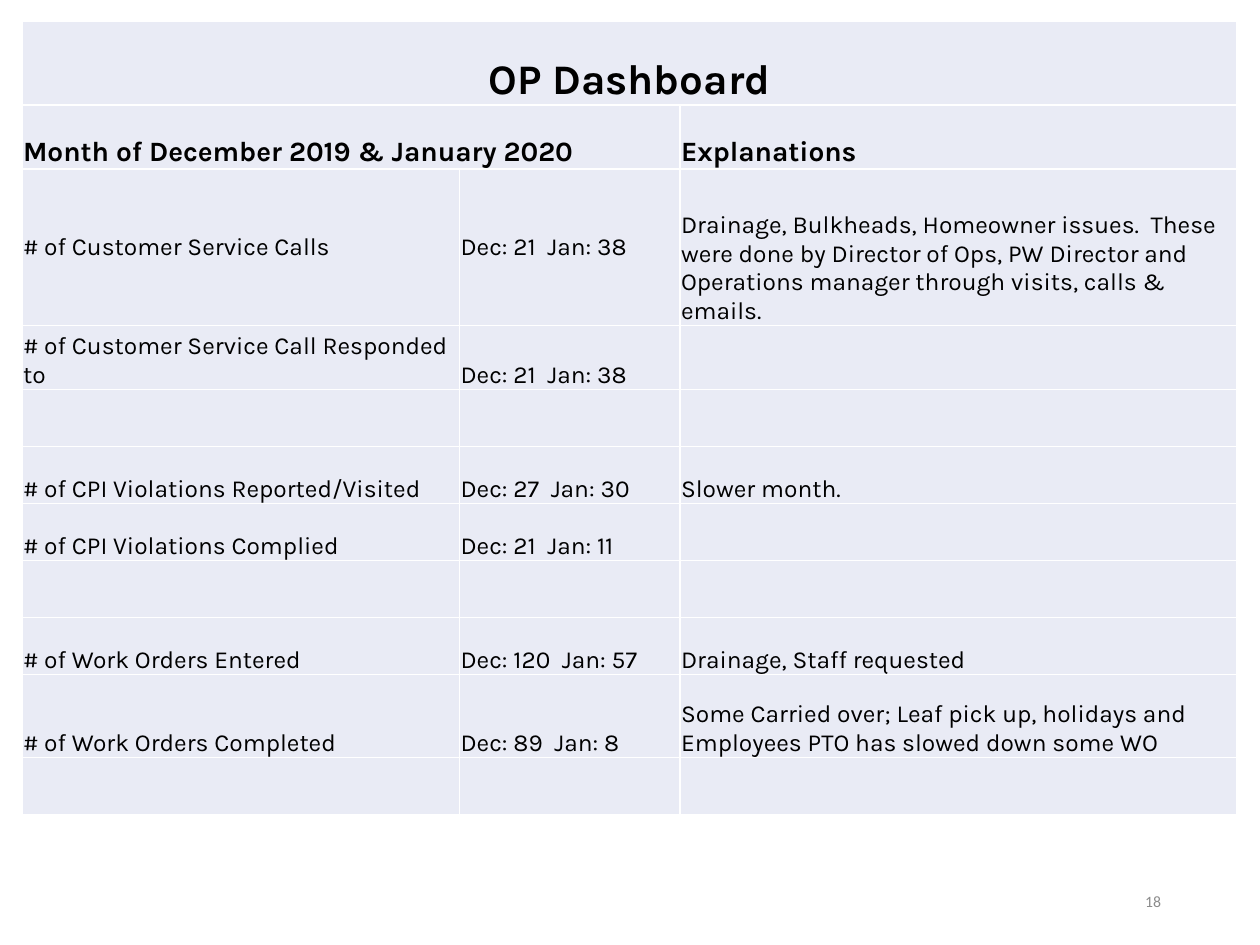
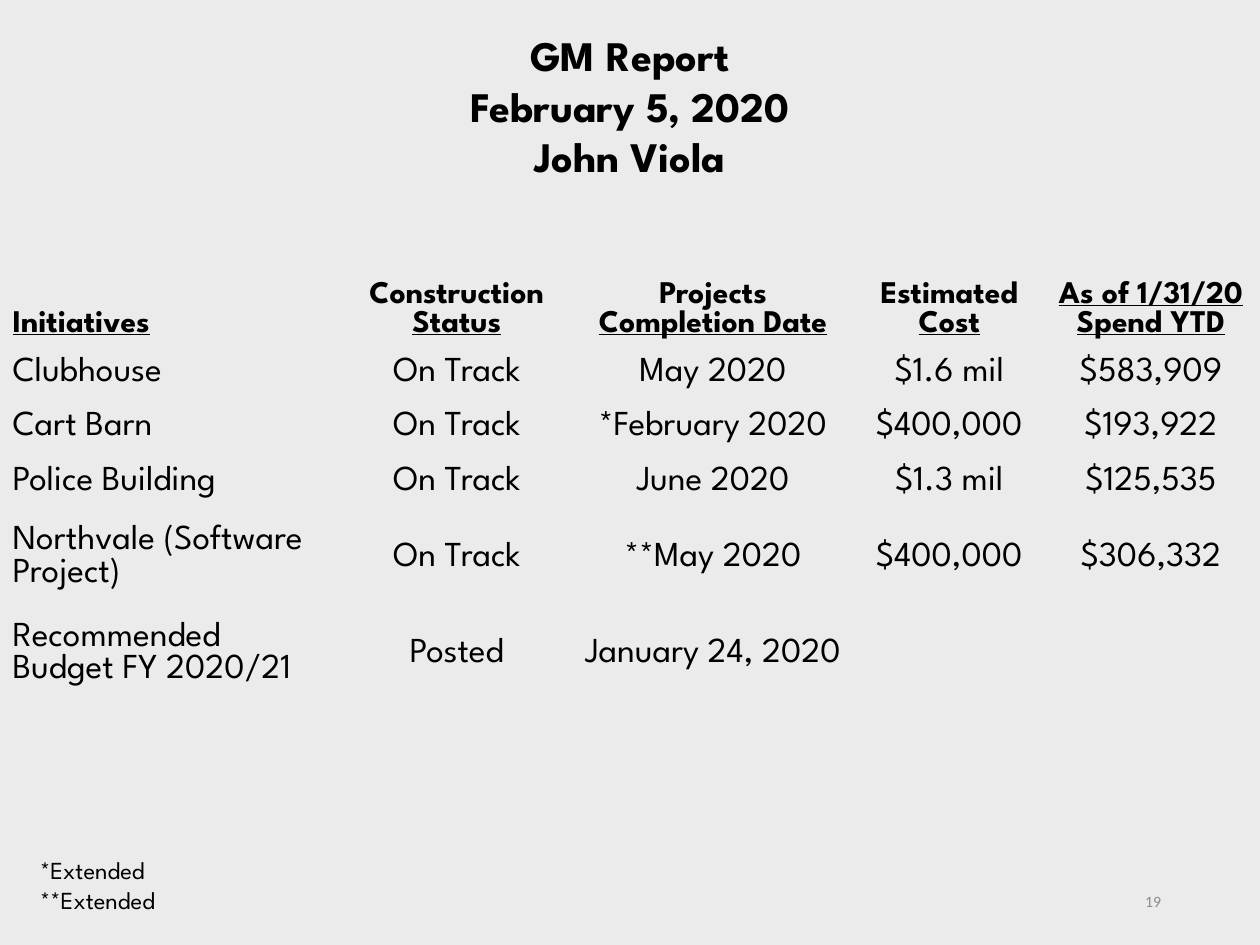
from lxml.etree import SubElement
from pptx import Presentation
from pptx.dml.color import RGBColor
from pptx.enum.text import MSO_ANCHOR, PP_ALIGN
from pptx.oxml.ns import qn
from pptx.util import Pt

BLACK = RGBColor(0x00, 0x00, 0x00)
WHITE = RGBColor(0xFF, 0xFF, 0xFF)
CELL_BLUE = RGBColor(0xE9, 0xEB, 0xF5)
PAGE_GREY = RGBColor(0xEC, 0xEB, 0xEB)
NUMBER_GREY = RGBColor(0x8C, 0x8C, 0x8C)
PLAIN_TABLE_STYLE = "{2D5ABB26-0587-4C30-8999-92F81FD0307C}"
TITLE_ONLY, BLANK = 5, 6
FIRST_NUMBER = 18

DASHBOARD_FORMATS = {
    "title": {"name": "Karla", "size": Pt(24), "bold": True},
    "heading": {"name": "Karla", "size": Pt(16), "bold": True},
    "body": {"name": "Karla", "size": Pt(14), "bold": False},
}
REPORT_FORMATS = {
    "title": {"name": "League Spartan", "size": Pt(24), "bold": True},
    "heading": {"name": "League Spartan", "size": Pt(18), "bold": True},
    "body": {"name": "League Spartan", "size": Pt(20), "bold": False},
    "note": {"name": "League Spartan", "size": Pt(14), "bold": False},
}
NUMBER_FORMAT = {"name": "Calibri", "size": Pt(9)}

DASHBOARD_COLUMNS = (250, 126, 318.5)
DASHBOARD_HEIGHTS = (48, 36.5, 89.5, 36.5, 32.6, 32.6, 32.6, 32.6, 32.6, 47.5, 32.6)
DASHBOARD_ROWS = (
    ("OP Dashboard", "", ""),
    ("Month of December 2019 & January 2020", "", "Explanations"),
    ("# of Customer Service Calls", "Dec: 21  Jan: 38",
     "Drainage, Bulkheads, Homeowner issues.  These were done by Director of Ops, "
     "PW Director and Operations manager through visits, calls & emails."),
    ("# of Customer Service Call Responded to", "Dec: 21  Jan: 38", ""),
    ("", "", ""),
    ("# of CPI Violations Reported/Visited", "Dec: 27  Jan: 30", "Slower month."),
    ("# of CPI Violations Complied", "Dec: 21  Jan: 11", ""),
    ("", "", ""),
    ("# of Work Orders Entered", "Dec: 120  Jan: 57", "Drainage, Staff requested"),
    ("# of Work Orders Completed", "Dec: 89  Jan: 8",
     "Some Carried over; Leaf pick up, holidays and Employees PTO has slowed down some WO"),
    ("", "", ""),
)

REPORT_COLUMNS = (196.5, 129, 164, 106, 124.5)
REPORT_HEIGHTS = (49.2, 31.2, 31.2, 31.2, 55.4, 55.4)
# Each heading is a list of paragraphs: plain text, then underlined text.
REPORT_HEADINGS = (
    [("", "Initiatives")],
    [("Construction ", "Status")],
    [("Projects ", "Completion Date")],
    [("Estimated ", "Cost")],
    [("", "As of 1/31/20"), ("", "Spend YTD")],
)
REPORT_ROWS = (
    ("Clubhouse", "On Track", "May 2020", "$1.6 mil", "$583,909"),
    ("Cart Barn", "On Track", "*February 2020", "$400,000", "$193,922"),
    ("Police Building", "On Track", "June 2020", "$1.3 mil", "$125,535"),
    ("Northvale (Software Project)", "On Track", "**May 2020", "$400,000", "$306,332"),
    ("Recommended\nBudget FY 2020/21", "Posted", "January 24, 2020", "", ""),
)


def set_attributes(target, values):
    for name, value in values.items():
        setattr(target, name, value)


def write_paragraphs(frame, paragraphs, font_format, alignment=PP_ALIGN.LEFT,
                     spacing=None, color=BLACK):
    """Write paragraphs given as (plain, underlined) text pairs."""
    for index, pair in enumerate(paragraphs):
        paragraph = frame.add_paragraph() if index else frame.paragraphs[0]
        set_attributes(paragraph, {"alignment": alignment, "line_spacing": spacing})
        for text, underline in zip(pair, (False, True)):
            if not text:
                continue
            for part_index, part in enumerate(text.split("\v")):
                if part_index:
                    paragraph.add_line_break()
                run = paragraph.add_run()
                run.text = part
                set_attributes(run.font, {**font_format, "underline": underline})
                run.font.color.rgb = color


def plain(text):
    return [(line, "") for line in text.split("\n")]


def place(shape, left, top, width, height):
    set_attributes(shape, {"left": Pt(left), "top": Pt(top),
                           "width": Pt(width), "height": Pt(height)})


def add_text(slide, box, text, font_format, anchor=MSO_ANCHOR.TOP, **options):
    shape = slide.shapes.add_textbox(*map(Pt, box))
    set_attributes(shape.text_frame, {"word_wrap": True, "vertical_anchor": anchor})
    write_paragraphs(shape.text_frame, plain(text), font_format, **options)


def add_slide_number(slide, number):
    add_text(slide, (508.5, 500.5, 162, 28.8), str(number), NUMBER_FORMAT,
             MSO_ANCHOR.MIDDLE, alignment=PP_ALIGN.RIGHT, color=NUMBER_GREY)


def add_plain_table(slide, left, top, columns, heights):
    frame = slide.shapes.add_table(len(heights), len(columns), Pt(left), Pt(top),
                                   Pt(sum(columns)), Pt(sum(heights)))
    table = frame.table
    set_attributes(table, {"first_row": False, "horz_banding": False})
    table._tbl.tblPr.find(qn("a:tableStyleId")).text = PLAIN_TABLE_STYLE
    for column, width in zip(table.columns, columns):
        column.width = Pt(width)
    for row, height in zip(table.rows, heights):
        row.height = Pt(height)
    return table


def add_cell_borders(cell, color):
    properties = cell._tc.get_or_add_tcPr()
    for side in ("a:lnL", "a:lnR", "a:lnT", "a:lnB"):
        line = SubElement(properties, qn(side), w=str(Pt(1)))
        fill = SubElement(line, qn("a:solidFill"))
        SubElement(fill, qn("a:srgbClr"), val=str(color))


def build_dashboard(presentation):
    slide = presentation.slides.add_slide(presentation.slide_layouts[BLANK])
    table = add_plain_table(slide, 12.5, 12, DASHBOARD_COLUMNS, DASHBOARD_HEIGHTS)
    table.cell(0, 0).merge(table.cell(0, 2))
    table.cell(1, 0).merge(table.cell(1, 1))
    row_styles = {0: "title", 1: "heading"}
    margins = {"margin_left": Pt(0.7), "margin_right": Pt(0.7),
               "margin_top": Pt(0.7), "margin_bottom": 0}
    for row, texts in enumerate(DASHBOARD_ROWS):
        for column, text in enumerate(texts):
            cell = table.cell(row, column)
            add_cell_borders(cell, WHITE)
            cell.fill.solid()
            cell.fill.fore_color.rgb = CELL_BLUE
            centred = row == 2 and column < 2
            anchor = MSO_ANCHOR.MIDDLE if centred else MSO_ANCHOR.BOTTOM
            set_attributes(cell, {**margins, "vertical_anchor": anchor})
            if text:
                write_paragraphs(cell.text_frame, plain(text),
                                 DASHBOARD_FORMATS[row_styles.get(row, "body")],
                                 PP_ALIGN.LEFT if row else PP_ALIGN.CENTER)
    return slide


def build_report(presentation):
    slide = presentation.slides.add_slide(presentation.slide_layouts[TITLE_ONLY])
    slide.background.fill.solid()
    slide.background.fill.fore_color.rgb = PAGE_GREY

    title = slide.shapes.title
    place(title, 140.4, 13, 439.2, 94.3)
    title.text_frame.vertical_anchor = MSO_ANCHOR.TOP
    write_paragraphs(title.text_frame, plain("GM Report\nFebruary 5, 2020\vJohn Viola"),
                     REPORT_FORMATS["title"], PP_ALIGN.CENTER, Pt(29))

    table = add_plain_table(slide, 0, 148.3, REPORT_COLUMNS, REPORT_HEIGHTS)
    rows = [REPORT_HEADINGS] + [[plain(text) for text in row] for row in REPORT_ROWS]
    for row, contents in enumerate(rows):
        style, anchor, spacing = (("body", MSO_ANCHOR.MIDDLE, Pt(18.3)) if row else
                                  ("heading", MSO_ANCHOR.BOTTOM, Pt(16.6)))
        for column, paragraphs in enumerate(contents):
            cell = table.cell(row, column)
            cell.fill.background()
            cell.vertical_anchor = anchor
            write_paragraphs(cell.text_frame, paragraphs, REPORT_FORMATS[style],
                             PP_ALIGN.CENTER if column else PP_ALIGN.LEFT, spacing)

    add_text(slide, (15.8, 485.3, 113.8, 41), "*Extended\n**Extended",
             REPORT_FORMATS["note"], spacing=Pt(16.8))
    return slide


def main():
    presentation = Presentation()
    set_attributes(presentation, {"slide_width": Pt(720), "slide_height": Pt(540)})
    slides = [build_dashboard(presentation), build_report(presentation)]
    for number, slide in enumerate(slides, FIRST_NUMBER):
        add_slide_number(slide, number)
    presentation.save("out.pptx")


if __name__ == "__main__":
    main()
